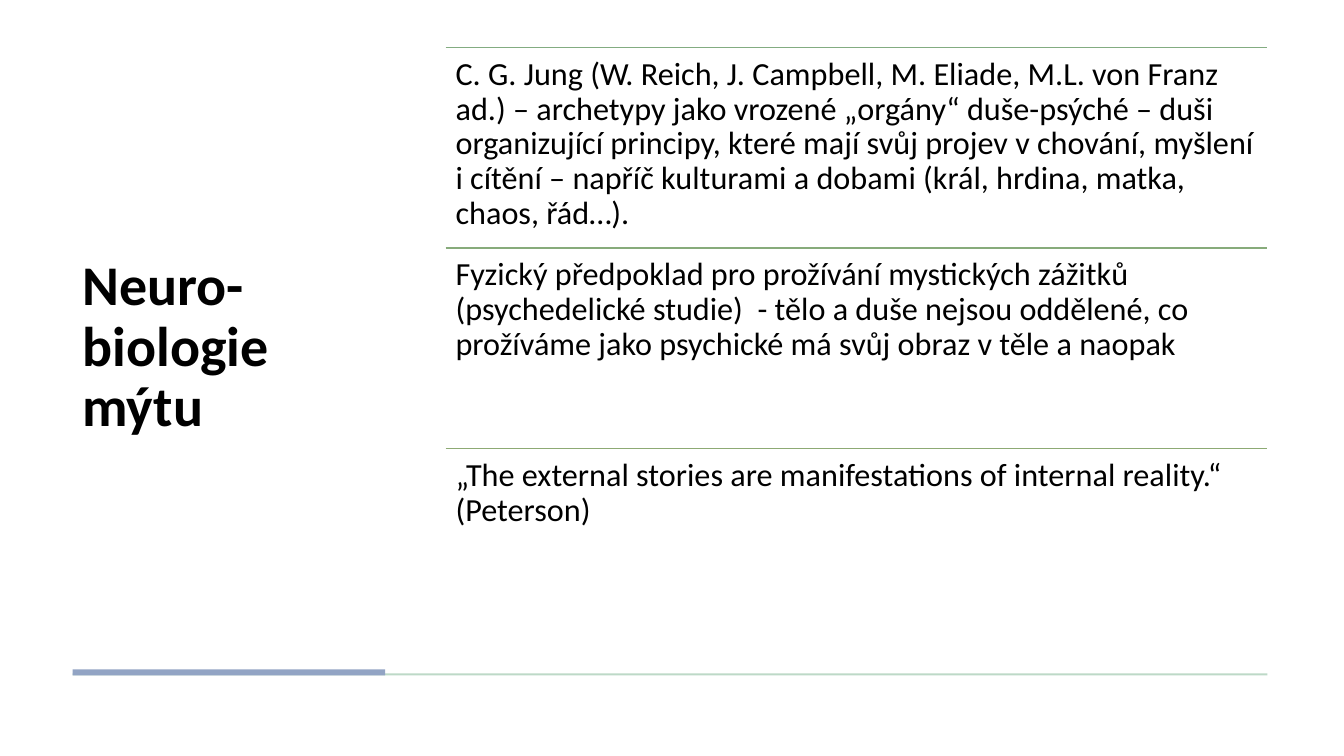
"""Builds the slide on the neurobiology of myth."""
from lxml.etree import SubElement
from pptx import Presentation
from pptx.dml.color import RGBColor
from pptx.enum.shapes import MSO_CONNECTOR, MSO_SHAPE
from pptx.enum.text import MSO_ANCHOR, PP_ALIGN
from pptx.oxml.ns import qn
from pptx.util import Inches, Pt


def color(hex_string):
    return RGBColor.from_string(hex_string)


def write_text(text_frame, text, *, font, size, text_color, bold=False):
    paragraph = text_frame.paragraphs[0]
    paragraph.alignment = PP_ALIGN.LEFT
    paragraph.line_spacing = 0.9
    run = paragraph.add_run()
    run.text = text
    run.font.name = font
    run.font.size = Pt(size)
    run.font.bold = bold
    run.font.color.rgb = color(text_color)


class SlideBuilder:
    font = "Calibri"
    text_color = "000000"

    def __init__(self, slide):
        self.slide = slide

    def background(self, fill):
        self.slide.background.fill.solid()
        self.slide.background.fill.fore_color.rgb = color(fill)

    def bar(self, left, top, width, height, fill):
        shape = self.slide.shapes.add_shape(
            MSO_SHAPE.RECTANGLE, Inches(left), Inches(top), Inches(width), Inches(height))
        shape.shadow.inherit = False
        shape.fill.solid()
        shape.fill.fore_color.rgb = color(fill)
        shape.line.fill.background()

    def rule(self, left, top, width, line_color):
        connector = self.slide.shapes.add_connector(
            MSO_CONNECTOR.STRAIGHT, Inches(left), Inches(top), Inches(left + width), Inches(top))
        connector.line.color.rgb = color(line_color)
        connector.line.width = Pt(1)
        SubElement(connector._element.spPr, qn("a:effectLst"))

    def text(self, left, top, width, height, text, *, size, bold=False,
             anchor=MSO_ANCHOR.TOP, inset_x=0.1, inset_y=0.1):
        box = self.slide.shapes.add_textbox(
            Inches(left), Inches(top), Inches(width), Inches(height))
        frame = box.text_frame
        frame.word_wrap = True
        frame.vertical_anchor = anchor
        frame.margin_left = frame.margin_right = Inches(inset_x)
        frame.margin_top = frame.margin_bottom = Inches(inset_y)
        write_text(frame, text, font=self.font, size=size,
                   text_color=self.text_color, bold=bold)


STATEMENTS = [
    ("83AC81", "C. G. Jung (W. Reich, J. Campbell, M. Eliade, M.L. von Franz ad.) – archetypy "
               "jako vrozené „orgány“ duše-psýché – duši organizující principy, které mají svůj "
               "projev v chování, myšlení i cítění – napříč kulturami a dobami (král, hrdina, "
               "matka, chaos, řád…)."),
    ("87AB7B", "Fyzický předpoklad pro prožívání mystických zážitků (psychedelické studie)  - tělo "
               "a duše nejsou oddělené, co prožíváme jako psychické má svůj obraz v těle a naopak"),
    ("8DAA74", "„The external stories are manifestations of internal reality.“ (Peterson)"),
]


def main():
    presentation = Presentation()
    presentation.slide_width = Inches(13.33)
    presentation.slide_height = Inches(7.5)
    builder = SlideBuilder(presentation.slides.add_slide(presentation.slide_layouts[6]))

    margin, top, content_height = 0.72, 0.47, 5.97
    builder.background("FFFFFF")
    builder.text(margin, top, 3.1, content_height, "Neuro-biologie mýtu", size=40,
                 bold=True, anchor=MSO_ANCHOR.MIDDLE, inset_y=0.05)
    builder.bar(margin, 6.68, 11.85, 0.02, "BDD9C7")
    builder.bar(margin, 6.64, 3.1, 0.06, "92A4C4")

    left, width = 4.42, 8.15
    row_height = content_height / len(STATEMENTS)
    for index, (line_color, statement) in enumerate(STATEMENTS):
        row_top = top + index * row_height
        builder.rule(left, row_top, width, line_color)
        builder.text(left, row_top, width, row_height, statement, size=23)

    presentation.save("out.pptx")


if __name__ == "__main__":
    main()
